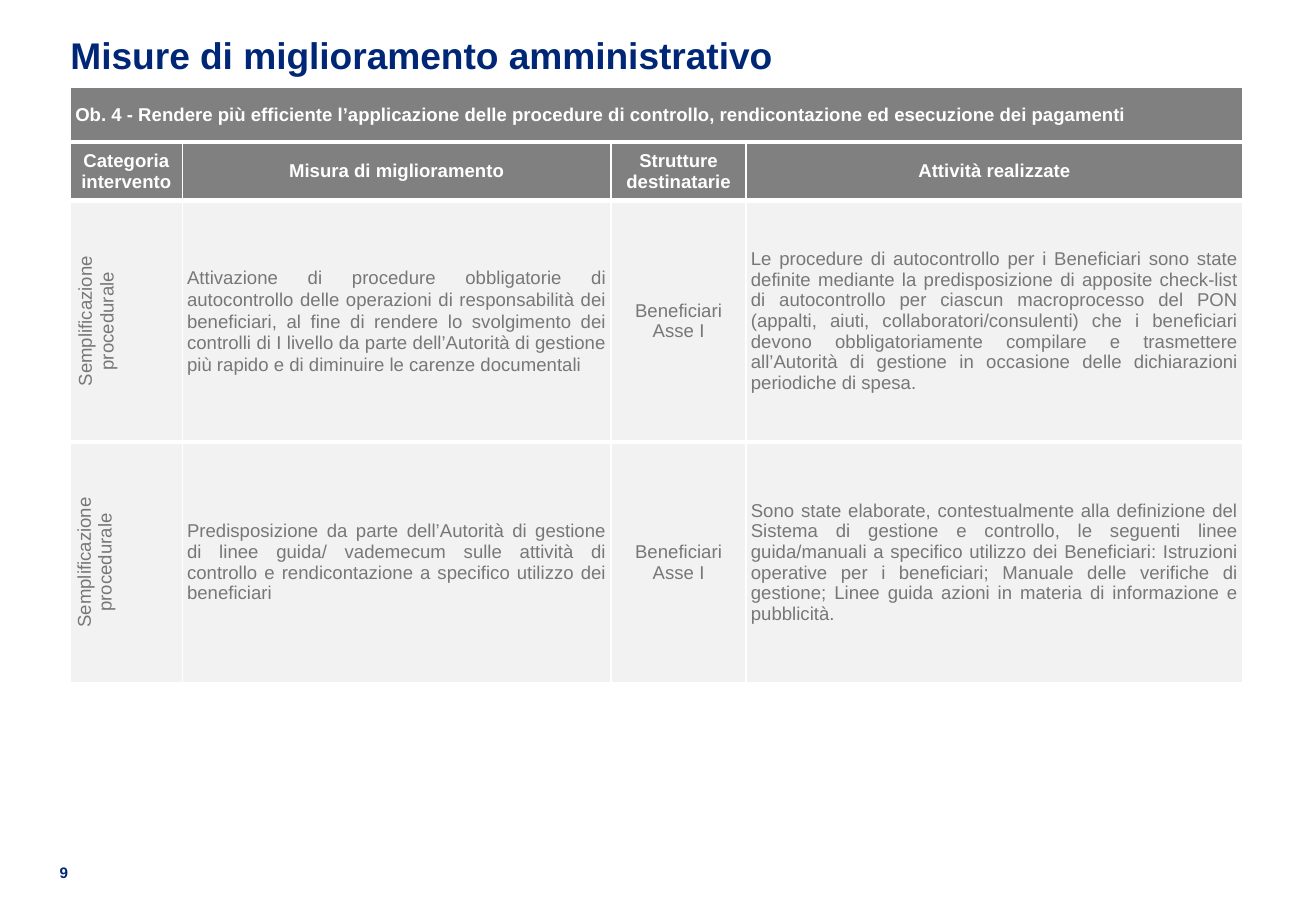
from lxml.etree import SubElement
from pptx import Presentation
from pptx.dml.color import RGBColor
from pptx.enum.text import MSO_ANCHOR as ANCHOR, PP_ALIGN as ALIGN
from pptx.oxml.ns import qn
from pptx.util import Inches, Pt

COLORS = {"navy": "002776", "header": "808080", "body": "F2F2F2",
          "text": "777777", "white": "FFFFFF"}


def add_run(p, text, size, color, bold):
    r = p.add_run()
    r.text = text
    r.font.name = "Arial"
    r.font.size = Pt(size)
    r.font.bold = bold
    r.font.color.rgb = RGBColor.from_string(COLORS[color])


def add_border(cell, side, width):
    ln = SubElement(cell._tc.get_or_add_tcPr(), qn(f"a:ln{side}"), w=str(Pt(width)))
    fill = SubElement(ln, qn("a:solidFill"))
    SubElement(fill, qn("a:srgbClr"), val=COLORS["white"])


prs = Presentation()
prs.slide_width, prs.slide_height = Inches(10.83), Inches(7.5)
s = prs.slides.add_slide(prs.slide_layouts[5])

title = s.shapes.title
title.left, title.top = Inches(0.58), Inches(0.19)
title.width, title.height = Inches(9.98), Inches(0.69)
number = s.shapes.add_textbox(Inches(0.49), Inches(7.1), Inches(0.34), Inches(0.16))

for sp, text, size, spacing in [
    (title, "Misure di miglioramento amministrativo", 22, 32),
    (number, "9", 9, 11.3),
]:
    tf = sp.text_frame
    tf.word_wrap = True
    tf.vertical_anchor = ANCHOR.TOP
    tf.margin_left = tf.margin_right = tf.margin_top = tf.margin_bottom = 0
    p = tf.paragraphs[0]
    p.alignment = ALIGN.LEFT
    p.line_spacing = Pt(spacing)
    add_run(p, text, size, "navy", True)

rows = [
    ["Ob. 4 - Rendere più efficiente l’applicazione delle procedure di controllo, "
     "rendicontazione ed esecuzione dei pagamenti", "", "", ""],
    ["Categoria intervento", "Misura di miglioramento",
     "Strutture destinatarie", "Attività realizzate"],
    ["Semplificazione procedurale",
     "Attivazione di procedure obbligatorie di autocontrollo delle operazioni di "
     "responsabilità dei beneficiari, al fine di rendere lo svolgimento dei controlli "
     "di I livello da parte dell’Autorità di gestione più rapido e di diminuire le "
     "carenze documentali",
     "Beneficiari Asse I",
     "Le procedure di autocontrollo per i Beneficiari sono state definite mediante la "
     "predisposizione di apposite check-list di autocontrollo per ciascun macroprocesso "
     "del PON (appalti, aiuti, collaboratori/consulenti) che i beneficiari devono "
     "obbligatoriamente compilare e trasmettere all’Autorità di gestione in occasione "
     "delle dichiarazioni periodiche di spesa."],
    ["Semplificazione procedurale",
     "Predisposizione da parte dell’Autorità di gestione di linee guida/ vademecum sulle "
     "attività di controllo e rendicontazione a specifico utilizzo dei beneficiari",
     "Beneficiari Asse I",
     "Sono state elaborate, contestualmente alla definizione del Sistema di gestione e "
     "controllo, le seguenti linee guida/manuali a specifico utilizzo dei Beneficiari: "
     "Istruzioni operative per i beneficiari; Manuale delle verifiche di gestione; Linee "
     "guida azioni in materia di informazione e pubblicità."],
]
col_widths = [0.92, 3.53, 1.11, 4.09]
row_heights = [0.45, 0.48, 1.6, 1.41]

table = s.shapes.add_table(4, 4, Inches(0.58), Inches(0.72),
                           Inches(sum(col_widths)), Inches(sum(row_heights))).table
table.first_row = table.horz_banding = False
for column, width in zip(table.columns, col_widths):
    column.width = Inches(width)
for row, height in zip(table.rows, row_heights):
    row.height = Inches(height)
table.cell(0, 0).merge(table.cell(0, 3))

for i, texts in enumerate(rows):
    is_header = i < 2
    for j, text in enumerate(texts):
        cell = table.cell(i, j)
        for side, width in [("L", 1), ("R", 1), ("T", 1 if i == 0 else 3),
                            ("B", 1 if i == 3 else 3)]:
            add_border(cell, side, width)
        cell.fill.solid()
        cell.fill.fore_color.rgb = RGBColor.from_string(
            COLORS["header" if is_header else "body"])
        cell.vertical_anchor = ANCHOR.MIDDLE
        cell.margin_left = cell.margin_right = Inches(0.04)
        cell.margin_top = cell.margin_bottom = Inches(0.03)
        if not text:
            continue
        p = cell.text_frame.paragraphs[0]
        justified = i == 0 or (not is_header and j in (1, 3))
        p.alignment = ALIGN.JUSTIFY if justified else ALIGN.CENTER
        if i == 2 and j < 2:
            p.line_spacing = 1.05
        elif not is_header:
            p.space_after = Pt(1 if j == 3 else 3)
        if not is_header and j == 0:
            cell._tc.get_or_add_tcPr().set("vert", "vert270")
        add_run(p, text, 11, "white" if is_header else "text", is_header)

prs.save("out.pptx")
